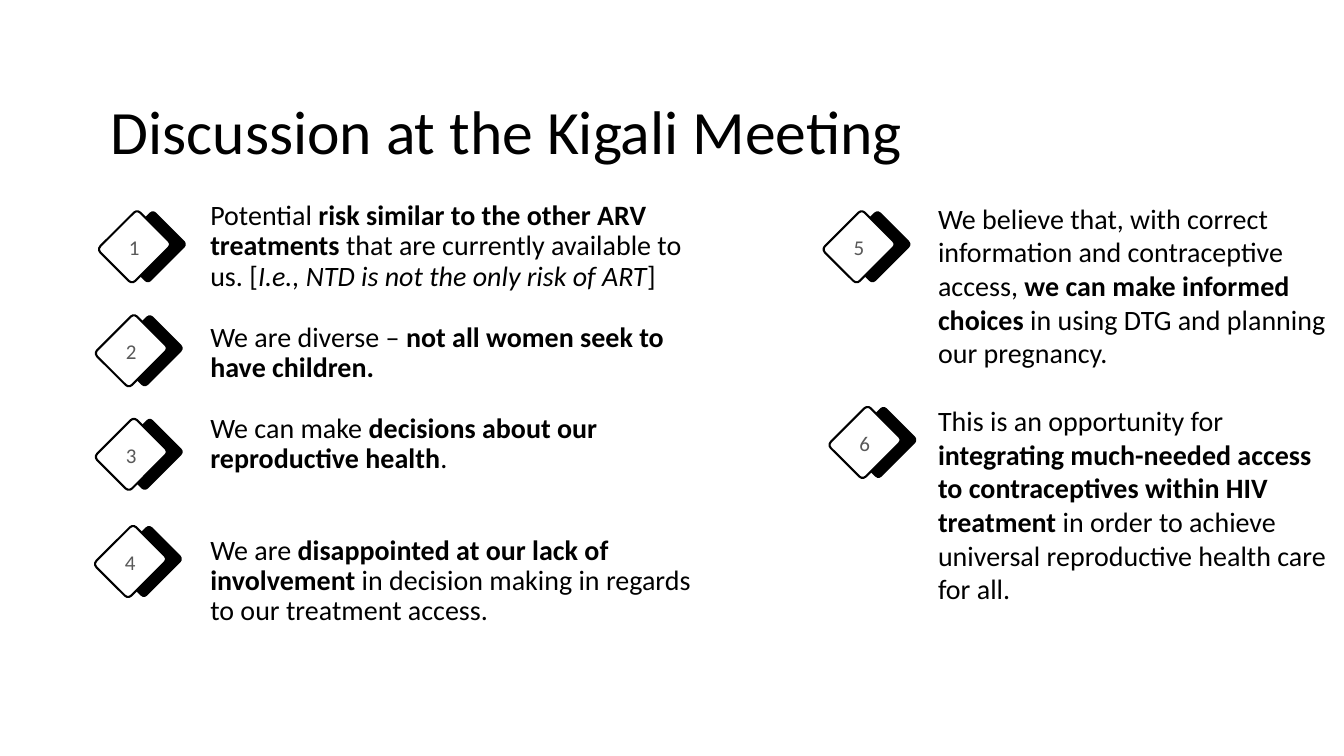
from pptx import Presentation
from pptx.dml.color import RGBColor
from pptx.enum.shapes import MSO_SHAPE
from pptx.enum.text import MSO_ANCHOR, PP_ALIGN
from pptx.util import Cm, Pt

ROUNDED = MSO_SHAPE.ROUNDED_RECTANGLE
TOP, MIDDLE = MSO_ANCHOR.TOP, MSO_ANCHOR.MIDDLE
LEFT, CENTER = PP_ALIGN.LEFT, PP_ALIGN.CENTER

BLACK, WHITE, GREY = "000000", "FFFFFF", "595959"
BOLD, ITALIC = {"bold": True}, {"italic": True}

TITLE = [(0, [("Discussion at the Kigali Meeting", {})])]

# Each paragraph is (space before in points, runs of text with their format).
LEFT_POINTS = [
    (0, [("Potential ", {}),
         ("risk similar to the other ARV treatments ", BOLD),
         ("that are currently available to us. [", {}),
         ("I.e., NTD is not the only risk of ART", ITALIC),
         ("]", {})]),
    (22, [("We are diverse – ", {}),
          ("not all women seek to have children.", BOLD)]),
    (22, [("We can make ", {}),
          ("decisions about our reproductive health", BOLD),
          (".", {})]),
    (44, [("We are ", {}),
          ("disappointed at our lack of involvement ", BOLD),
          ("in decision making in regards to our treatment access.", {})]),
]
RIGHT_POINTS = [
    (0, [("We believe that, with correct information and contraceptive access, ", {}),
         ("we can make informed choices", BOLD),
         (" in using DTG and planning our pregnancy.", {})]),
    (24.4, [("This is an opportunity for ", {}),
            ("integrating much-needed access to contraceptives within HIV treatment", BOLD),
            (" in order to achieve universal reproductive health care for all.", {})]),
]

# Left and top of each numbered badge, in centimetres.
BADGES = [(2.77, 5.51), (2.69, 8.13), (2.69, 10.74),
          (2.67, 13.44), (21.03, 5.51), (21.18, 10.44)]


def color(value):
    return RGBColor.from_string(value)


class SlideBuilder:
    """Holds the font and the current slide; lengths are in centimetres."""

    font_name = "Calibri"

    def __init__(self, slide):
        self.slide = slide

    def text(self, box, paragraphs, size, ink=BLACK, anchor=TOP, align=LEFT, spacing=1.0):
        shape = self.slide.shapes.add_textbox(*map(Cm, box))
        frame = shape.text_frame
        frame.word_wrap = True
        frame.vertical_anchor = anchor
        for index, (space_before, runs) in enumerate(paragraphs):
            paragraph = frame.add_paragraph() if index else frame.paragraphs[0]
            paragraph.alignment = align
            paragraph.line_spacing = spacing
            paragraph.space_before = Pt(space_before)
            for content, style in runs:
                run = paragraph.add_run()
                run.text = content
                run.font.color.rgb = color(ink)
                values = {"name": self.font_name, "size": Pt(size), **style}
                for name, value in values.items():
                    setattr(run.font, name, value)

    def tile(self, left, top, fill, line=None):
        """Draw a rounded rectangle turned by 45 degrees."""
        shape = self.slide.shapes.add_shape(ROUNDED, Cm(left), Cm(top), Cm(1.24), Cm(1.42))
        shape.adjustments[0] = 0.09
        shape.rotation = 45
        shape.shadow.inherit = False
        shape.fill.solid()
        shape.fill.fore_color.rgb = color(fill)
        if line:
            shape.line.color.rgb = color(line)
            shape.line.width = Pt(1.5)
        else:
            shape.line.fill.background()

    def badge(self, number, left, top):
        self.tile(left + 0.4, top, BLACK)
        self.tile(left, top, WHITE, BLACK)
        self.text((left + 0.07, top + 0.28, 1.09, 0.89), [(0, [(str(number), {})])],
                  15, ink=GREY, align=CENTER)


def main():
    presentation = Presentation()
    presentation.slide_width = Cm(33.87)
    presentation.slide_height = Cm(19.05)
    slide = presentation.slides.add_slide(presentation.slide_layouts[6])
    builder = SlideBuilder(slide)

    builder.text((2.54, 1.3, 27, 4.17), TITLE, 44, anchor=MIDDLE, spacing=0.9)
    builder.text((5.05, 4.95, 13.26, 13.03), LEFT_POINTS, 20, spacing=0.9)
    for number, (left, top) in enumerate(BADGES, start=1):
        builder.badge(number, left, top)
    builder.text((23.39, 4.95, 10.34, 10.52), RIGHT_POINTS, 20)

    presentation.save("out.pptx")


if __name__ == "__main__":
    main()
